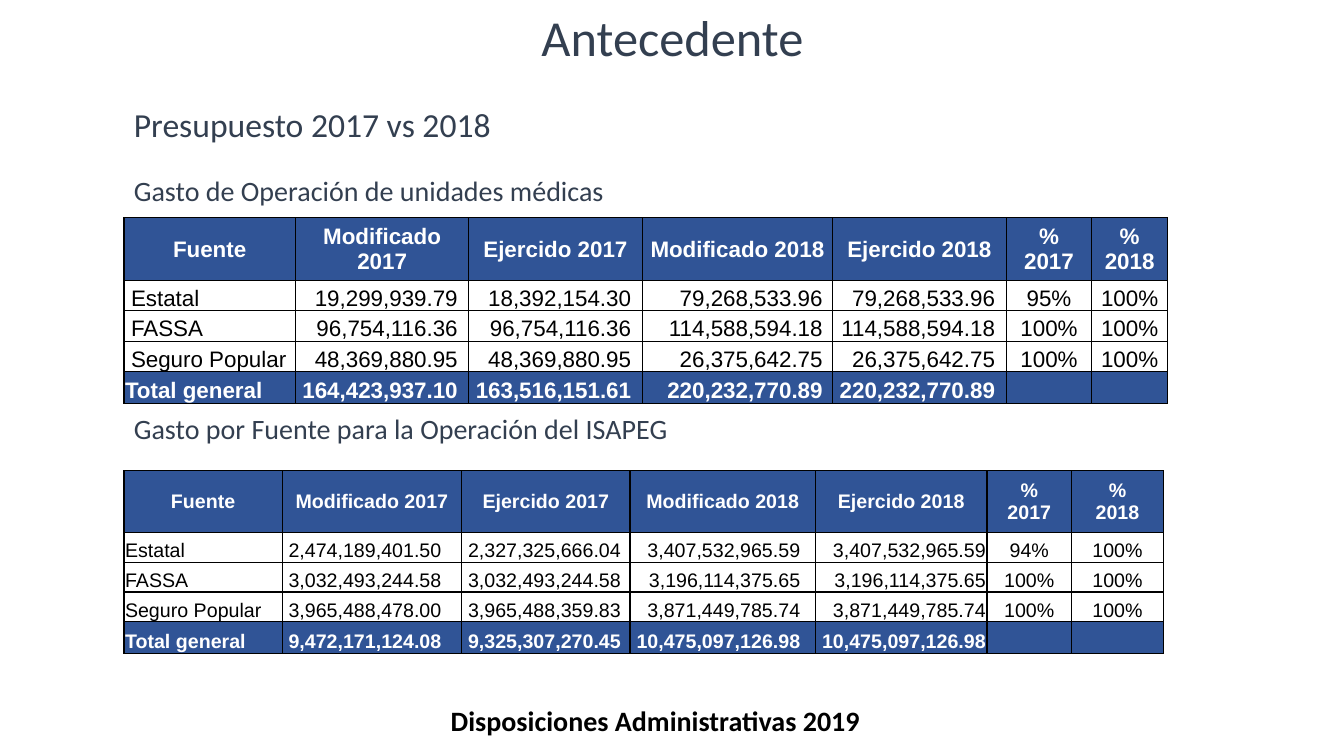
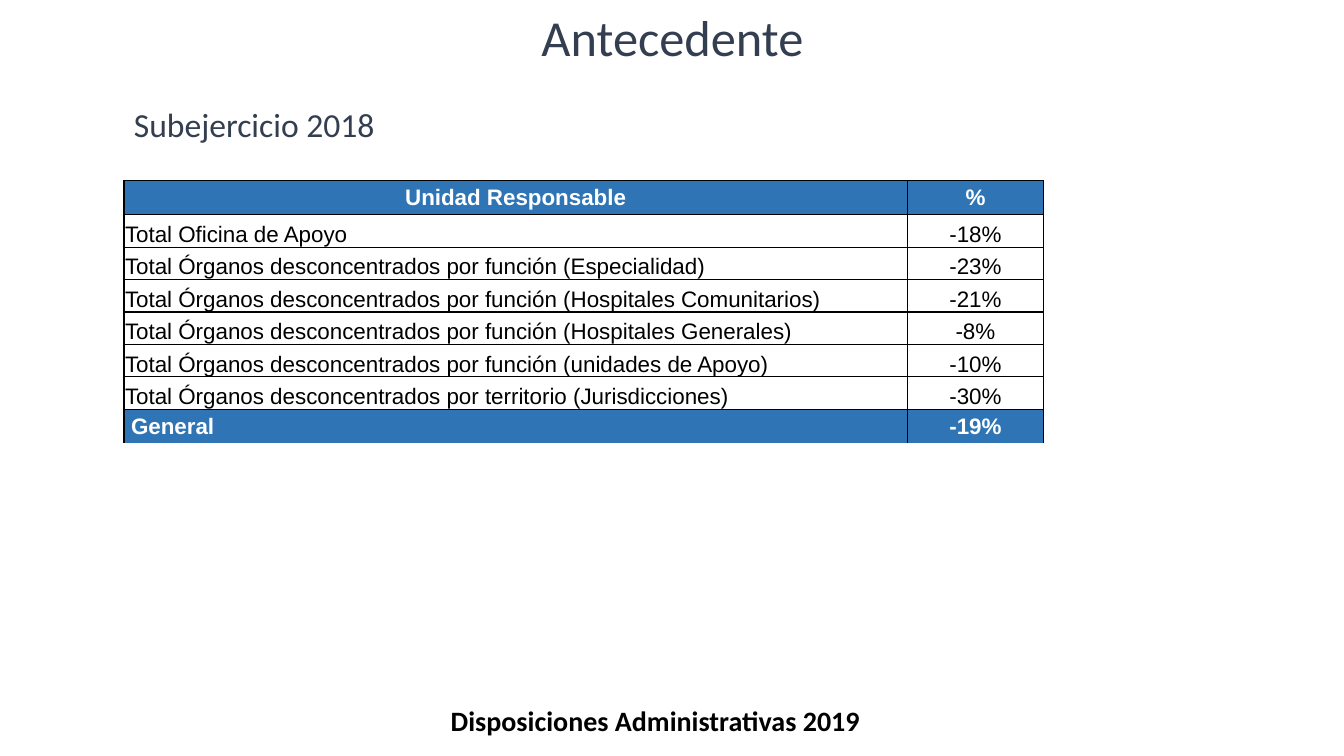
"""Budget background slides: spending tables for 2017 and 2018."""
from lxml import etree
from pptx import Presentation
from pptx import util as u
from pptx.dml.color import RGBColor
from pptx.enum import text
from pptx.oxml import ns

SLATE = RGBColor(0x33, 0x3F, 0x50)
BLACK = RGBColor(0, 0, 0)
WHITE = RGBColor(255, 255, 255)
NAVY = RGBColor(0x30, 0x54, 0x96)
BLUE = RGBColor(0x2F, 0x75, 0xB5)

LEFT, CENTER, RIGHT = text.PP_ALIGN.LEFT, text.PP_ALIGN.CENTER, text.PP_ALIGN.RIGHT
MIDDLE, BOTTOM = text.MSO_ANCHOR.MIDDLE, text.MSO_ANCHOR.BOTTOM
EDGE = 1.23
INSET = 0.01
INDENT = 0.07

BUDGET_HEADER = ("Fuente", "Modificado 2017", "Ejercido 2017", "Modificado 2018",
                 "Ejercido 2018", "%\v2017", "%\v2018")
BUDGET_ALIGNS = (LEFT, RIGHT, RIGHT, RIGHT, RIGHT, CENTER, CENTER)

UNITS = dict(
    top=2.16, height=1.84, header=0.62, last=0.31, size=16, fill=NAVY,
    widths=(1.7, 1.72, 1.72, 1.89, 1.72, 0.85, 0.75), aligns=BUDGET_ALIGNS,
    gaps=(INSET, 0.11, 0.11, 0.1, 0.11, INSET, INSET),
    body_indent=INDENT, total_indent=INSET, total_anchor=BOTTOM, closed=True,
    rows=[
        BUDGET_HEADER,
        ("Estatal", "19,299,939.79", "18,392,154.30", "79,268,533.96", "79,268,533.96", "95%", "100%"),
        ("FASSA", "96,754,116.36", "96,754,116.36", "114,588,594.18", "114,588,594.18", "100%", "100%"),
        ("Seguro Popular", "48,369,880.95", "48,369,880.95", "26,375,642.75", "26,375,642.75", "100%", "100%"),
        ("Total general", "164,423,937.10", "163,516,151.61", "220,232,770.89", "220,232,770.89", "", ""),
    ])

SOURCES = dict(
    top=4.67, height=1.81, header=0.61, last=0.31, size=14, fill=NAVY,
    widths=(1.57, 1.78, 1.67, 1.84, 1.7, 0.84, 0.91), aligns=BUDGET_ALIGNS,
    gaps=(INSET, 0.2, 0.09, 0.15, INSET, INSET, INSET),
    body_indent=INSET, total_indent=INSET, total_anchor=BOTTOM, closed=True,
    rows=[
        BUDGET_HEADER,
        ("Estatal", "2,474,189,401.50", "2,327,325,666.04", "3,407,532,965.59", "3,407,532,965.59", "94%", "100%"),
        ("FASSA", "3,032,493,244.58", "3,032,493,244.58", "3,196,114,375.65", "3,196,114,375.65", "100%", "100%"),
        ("Seguro Popular", "3,965,488,478.00", "3,965,488,359.83", "3,871,449,785.74", "3,871,449,785.74", "100%", "100%"),
        ("Total general", "9,472,171,124.08", "9,325,307,270.45", "10,475,097,126.98", "10,475,097,126.98", "", ""),
    ])

UNDERSPENDING = dict(
    top=1.79, height=2.61, header=0.34, last=0.34, size=16, fill=BLUE,
    widths=(7.77, 1.35), aligns=(LEFT, CENTER), gaps=(INSET, INSET),
    body_indent=INSET, total_indent=INDENT, total_anchor=MIDDLE, closed=False,
    rows=[
        ("Unidad Responsable", "%"),
        ("Total Oficina de Apoyo", "-18%"),
        ("Total Órganos desconcentrados por función (Especialidad)", "-23%"),
        ("Total Órganos desconcentrados por función (Hospitales Comunitarios)", "-21%"),
        ("Total Órganos desconcentrados por función (Hospitales Generales)", "-8%"),
        ("Total Órganos desconcentrados por función (unidades de Apoyo)", "-10%"),
        ("Total Órganos desconcentrados por territorio (Jurisdicciones)", "-30%"),
        ("General", "-19%"),
    ])

PAGES = [
    dict(heading="Presupuesto 2017 vs 2018",
         labels=[(1.62, "Gasto de Operación de unidades médicas"),
                 (3.98, "Gasto por Fuente para la Operación del ISAPEG")],
         tables=[UNITS, SOURCES]),
    dict(heading="Subejercicio 2018", labels=[], tables=[UNDERSPENDING]),
]


def style(para, align, name, size, color, bold=False):
    para.alignment = align
    for span in para.runs:
        span.font.name, span.font.size, span.font.bold = name, u.Pt(size), bold
        span.font.color.rgb = color


def add_text(page, words, place, size, color=SLATE, align=LEFT, anchor=BOTTOM, bold=False, spacing=0.9):
    box = page.shapes.add_textbox(*map(u.Inches, place))
    frame = box.text_frame
    frame.word_wrap = True
    frame.vertical_anchor = anchor
    frame.text = words
    para = frame.paragraphs[0]
    para.line_spacing = spacing
    style(para, align, "Calibri", size, color, bold)


def add_borders(cell, sides):
    props = cell._tc.get_or_add_tcPr()
    for side in sides:
        line = etree.SubElement(props, ns.qn("a:ln" + side), w=str(u.Pt(1)))
        solid = etree.SubElement(line, ns.qn("a:solidFill"))
        etree.SubElement(solid, ns.qn("a:srgbClr"), val=str(BLACK))


def add_grid(page, spec):
    rows, widths = spec["rows"], spec["widths"]
    last = len(rows) - 1
    body = (spec["height"] - spec["header"] - spec["last"]) / (last - 1)
    heights = [spec["header"], *[body] * (last - 1), spec["last"]]
    place = (EDGE, spec["top"], sum(widths), spec["height"])
    table = page.shapes.add_table(len(rows), len(widths), *map(u.Inches, place)).table
    table.first_row = table.horz_banding = False
    for column, width in zip(table.columns, widths):
        column.width = u.Inches(width)
    for r, (row, height) in enumerate(zip(rows, heights)):
        table.rows[r].height = u.Inches(height)
        head, total = r == 0, r == last
        band = head or total
        for c, words in enumerate(row):
            cell = table.cell(r, c)
            cell.text = words
            indent = spec["total_indent"] if total else spec["body_indent"]
            cell.margin_left = u.Inches(indent if c == 0 and not head else INSET)
            cell.margin_right = u.Inches(INSET if head else spec["gaps"][c])
            cell.margin_top, cell.margin_bottom = u.Inches(INSET), 0
            cell.vertical_anchor = MIDDLE if head else spec["total_anchor"] if total else BOTTOM
            add_borders(cell, "LRTB" if spec["closed"] or not total else "LRT")
            if band:
                cell.fill.solid()
                cell.fill.fore_color.rgb = spec["fill"]
            else:
                cell.fill.background()
            style(cell.text_frame.paragraphs[0], CENTER if head else spec["aligns"][c],
                  "Arial", spec["size"], WHITE if band else BLACK, band)


def main():
    deck = Presentation()
    deck.slide_width, deck.slide_height = u.Inches(13.33), u.Inches(7.5)
    for content in PAGES:
        page = deck.slides.add_slide(deck.slide_layouts[6])
        add_text(page, "Disposiciones Administrativas 2019", (4.02, 6.95, 4.96, 0.4), 20,
                 BLACK, CENTER, MIDDLE, True, 1.0)
        add_text(page, "Antecedente", (1.67, 0.05, 10, 0.69), 36, align=CENTER, anchor=MIDDLE)
        add_text(page, content["heading"], (EDGE, 0.99, 10, 0.5), 24)
        for top, words in content["labels"]:
            add_text(page, words, (EDGE, top, 10, 0.49), 20)
        for spec in content["tables"]:
            add_grid(page, spec)
    deck.save("out.pptx")


if __name__ == "__main__":
    main()
